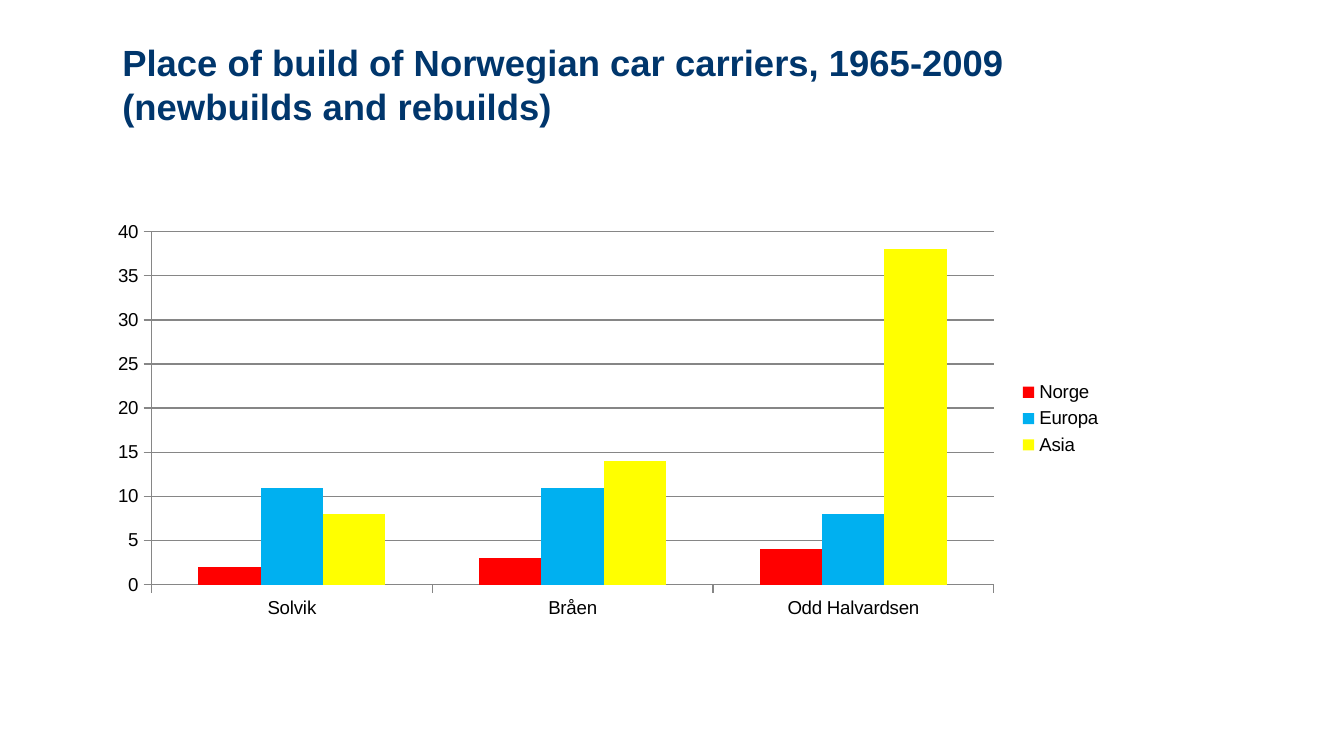
from dataclasses import dataclass

from pptx import Presentation
from pptx.chart.data import CategoryChartData
from pptx.dml.color import RGBColor
from pptx.enum.chart import XL_CHART_TYPE as ChartType
from pptx.enum.chart import XL_LEGEND_POSITION as LegendPosition
from pptx.enum.chart import XL_TICK_MARK as TickMark
from pptx.enum.text import MSO_ANCHOR as Anchor
from pptx.enum.text import PP_ALIGN as Align
from pptx.oxml import parse_xml
from pptx.oxml.ns import nsdecls, qn
from pptx.util import Inches, Pt

CELL = Inches(0.1)
COLUMNS, ROWS = 100, 56.25
FONT = "Arial"
NAVY, BLACK, GREY = "00366C", "000000", "868686"
CATEGORIES = ("Solvik", "Bråen", "Odd Halvardsen")


@dataclass(frozen=True)
class Area:
    column: float
    row: float
    columns: float
    rows: float

    def lengths(self) -> tuple[int, ...]:
        cells = (self.column, self.row, self.columns, self.rows)
        return tuple(round(count * CELL) for count in cells)


@dataclass(frozen=True)
class Region:
    name: str
    ships: tuple[int, ...]
    color: str


TITLE_AREA = Area(9.1, 6.9, 72.8, 5.9)
CHART_AREA = Area(7.5, 15.7, 75.5, 30.9)
PLOT_SHARES = {"x": 0.05, "y": 0.05, "w": 0.83, "h": 0.85}
REGIONS = (
    Region("Norge", (2, 3, 4), "FF0000"),
    Region("Europa", (11, 11, 8), "00B0F0"),
    Region("Asia", (8, 14, 38), "FFFF00"),
)


def rgb(color: str) -> RGBColor:
    return RGBColor.from_string(color)


def apply(target, values: dict) -> None:
    for name, value in values.items():
        setattr(target, name, value)


def format_font(font, size: float, color: str, bold: bool) -> None:
    apply(font, {"name": FONT, "size": Pt(size), "bold": bold})
    font.color.rgb = rgb(color)


def format_line(line) -> None:
    line.width = Pt(0.75)
    line.color.rgb = rgb(GREY)


def write_title(title, text: str) -> None:
    left, top, width, height = TITLE_AREA.lengths()
    apply(title, {"left": left, "top": top, "width": width, "height": height})
    frame = title.text_frame
    apply(frame, {
        "margin_left": 0, "margin_top": 0, "margin_right": 0,
        "margin_bottom": Inches(0.33),
        "vertical_anchor": Anchor.BOTTOM, "word_wrap": True,
    })
    para = frame.paragraphs[0]
    apply(para, {"alignment": Align.LEFT, "line_spacing": 1.0})
    span = para.add_run()
    span.text = text
    format_font(span.font, 19.5, NAVY, True)


def place_plot(chart) -> None:
    plot_area = chart.plots[0]._element.getparent()
    for layout in plot_area.findall(qn("c:layout")):
        plot_area.remove(layout)
    shares = "".join(f'<c:{side} val="{share}"/>' for side, share in PLOT_SHARES.items())
    plot_area.insert(0, parse_xml(
        f'<c:layout {nsdecls("c")}><c:manualLayout><c:layoutTarget val="inner"/>'
        f'<c:xMode val="edge"/><c:yMode val="edge"/>{shares}'
        "</c:manualLayout></c:layout>"
    ))


def draw_chart(page) -> None:
    data = CategoryChartData()
    data.categories = CATEGORIES
    for region in REGIONS:
        data.add_series(region.name, region.ships)
    chart = page.shapes.add_chart(
        ChartType.COLUMN_CLUSTERED, *CHART_AREA.lengths(), data
    ).chart
    format_font(chart.font, 10, BLACK, False)
    apply(chart, {"has_title": False, "has_legend": True})
    apply(chart.legend, {"position": LegendPosition.RIGHT, "include_in_layout": False})

    plot = chart.plots[0]
    apply(plot, {"gap_width": 150, "overlap": 0, "vary_by_categories": False})
    for series, region in zip(plot.series, REGIONS):
        series.format.fill.solid()
        series.format.fill.fore_color.rgb = rgb(region.color)

    for axis in (chart.category_axis, chart.value_axis):
        apply(axis, {"major_tick_mark": TickMark.OUTSIDE, "minor_tick_mark": TickMark.NONE})
        format_line(axis.format.line)
    apply(chart.value_axis, {
        "minimum_scale": 0, "maximum_scale": 40, "major_unit": 5,
        "has_major_gridlines": True,
    })
    format_line(chart.value_axis.major_gridlines.format.line)
    place_plot(chart)


def main() -> None:
    deck = Presentation()
    apply(deck, {"slide_width": round(COLUMNS * CELL), "slide_height": round(ROWS * CELL)})
    page = deck.slides.add_slide(deck.slide_layouts[5])
    write_title(
        page.shapes.title,
        "Place of build of Norwegian car carriers, 1965-2009 (newbuilds and rebuilds)",
    )
    draw_chart(page)
    deck.save("out.pptx")


if __name__ == "__main__":
    main()
